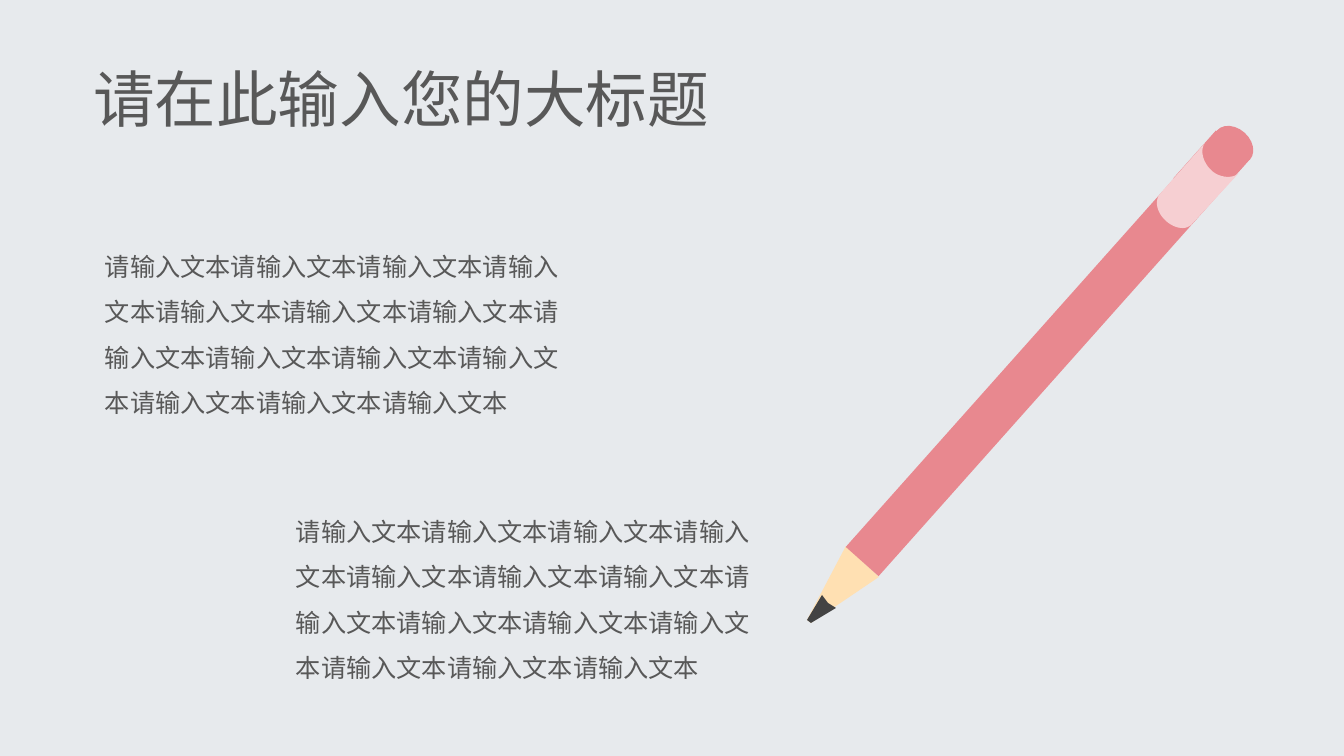
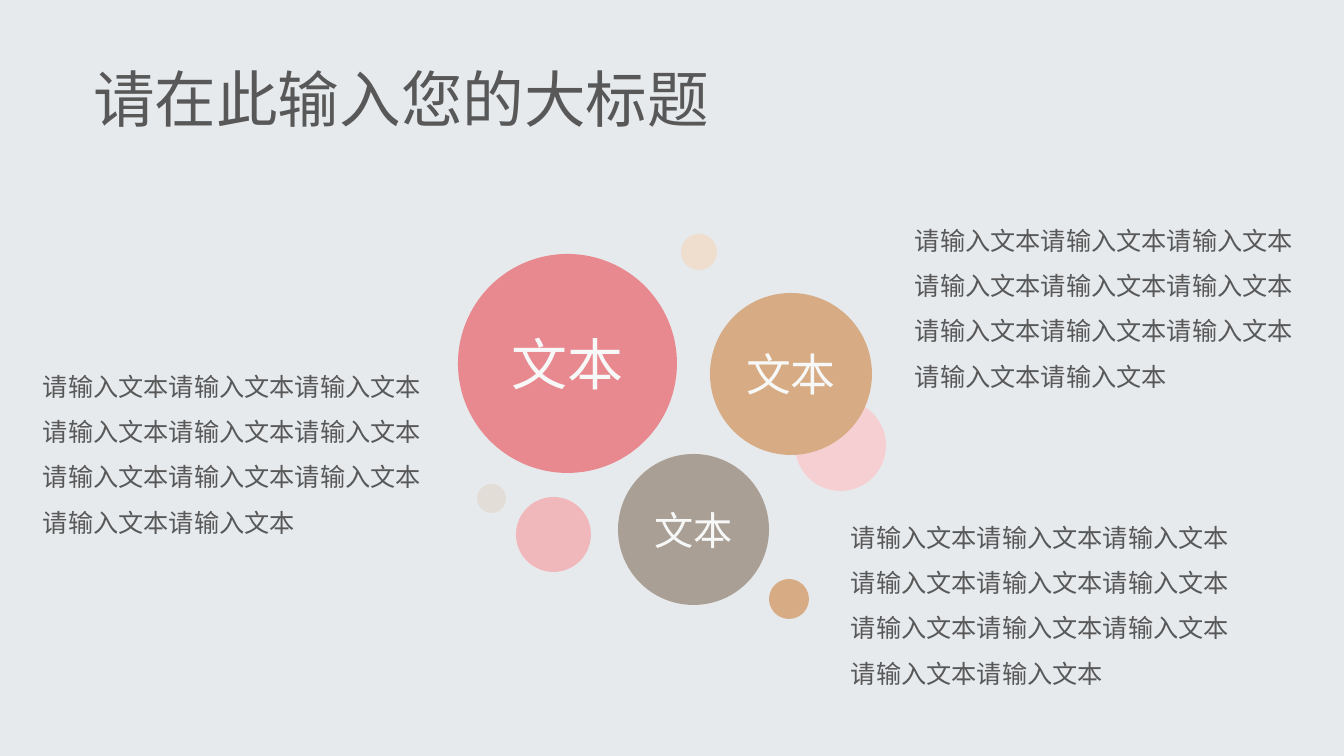
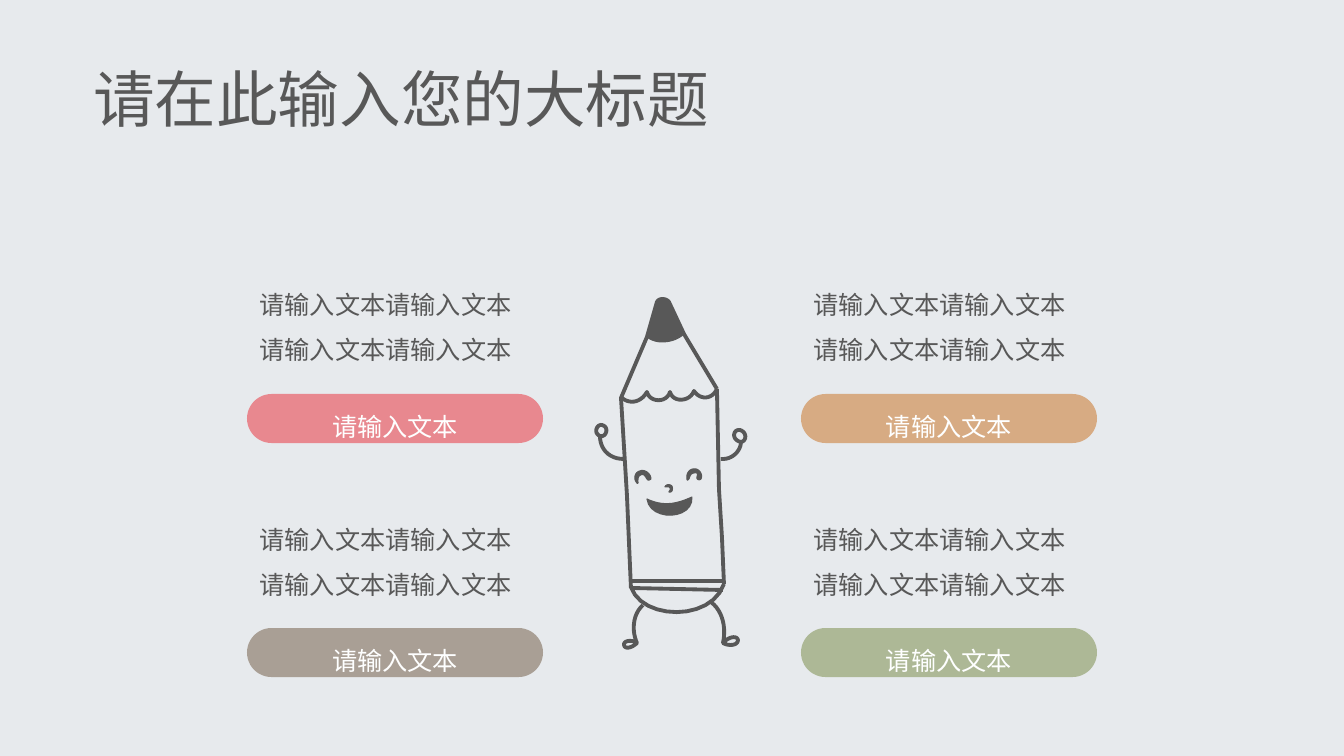
from dataclasses import dataclass
from typing import Optional, Union

from lxml import etree
from pptx import Presentation
from pptx.dml.color import RGBColor
from pptx.enum.shapes import MSO_SHAPE
from pptx.enum.text import MSO_ANCHOR, MSO_AUTO_SIZE, PP_ALIGN
from pptx.oxml.ns import qn
from pptx.shapes.autoshape import Shape
from pptx.shapes.shapetree import GroupShapes, SlideShapes
from pptx.slide import Slide, SlideLayout
from pptx.text.text import TextFrame
from pptx.util import Emu, Pt

EMU_PER_PX = 914400 / 100.8
SLIDE_WIDTH, SLIDE_HEIGHT = 1344, 756
TITLE_ONLY = 5
FIRST_SHAPE_INDEX = 2
CURVE_STEPS = 12
PENCIL_ANGLE = 131.7

RECTANGLE = MSO_SHAPE.RECTANGLE
OVAL = MSO_SHAPE.OVAL
ROUNDED = MSO_SHAPE.ROUNDED_RECTANGLE
LEFT, CENTER = PP_ALIGN.LEFT, PP_ALIGN.CENTER
MIDDLE, BOTTOM = MSO_ANCHOR.MIDDLE, MSO_ANCHOR.BOTTOM
NO_AUTOFIT = MSO_AUTO_SIZE.NONE

TITLE = "请在此输入您的大标题"
PHRASE = "请输入文本"
WORD = "文本"

Shapes = Union[SlideShapes, GroupShapes]
Segment = tuple[int, ...]  # two numbers: line to a point; six: cubic curve


@dataclass(frozen=True)
class Theme:
    font: str = "Noto Sans CJK SC"
    background: str = "E7EAED"
    text: str = "585858"
    circle_text: str = "F7F8F8"
    pill_text: str = "FEFFFF"
    rose: str = "E8888F"
    blush: str = "F1B8BC"
    pale_rose: str = "F6CFD2"
    tan: str = "D7AB83"
    pale_tan: str = "EFDDCD"
    taupe: str = "A99F95"
    sage: str = "ADB896"
    wood: str = "FFE0B2"
    lead: str = "434343"
    title_size: int = 44
    body_size: int = 18
    title_spacing: float = 0.9
    body_spacing: float = 1.5
    stroke: float = 2.75
    outline: float = 0.75


THEME = Theme()


@dataclass(frozen=True)
class Box:
    left: int
    top: int
    width: int
    height: int


@dataclass(frozen=True)
class Circle:
    left: int
    top: int
    diameter: int
    color: str
    text_size: int = 0
    alpha: int = 100


@dataclass(frozen=True)
class Outline:
    start: tuple[int, int]
    segments: tuple[Segment, ...]
    fill: Optional[str] = None
    line_width: float = 0


def stroke(start: tuple[int, int], *segments: Segment) -> Outline:
    return Outline(start, segments, line_width=THEME.stroke)


def blot(start: tuple[int, int], *segments: Segment) -> Outline:
    """Closed doodle part, filled with the drawing colour."""
    return Outline(start, segments, THEME.text, THEME.outline)


PENCIL_WOOD = Outline((879, 577), ((811, 623), (807, 620), (846, 546)), THEME.wood)
PENCIL_BAND = Outline(
    (1166, 221),
    (
        (1157, 213, 1154, 201, 1160, 194),
        (1205, 143),
        (1200, 149, 1202, 162, 1212, 171),
        (1220, 178, 1233, 179, 1239, 173),
        (1193, 223),
        (1187, 231, 1175, 229, 1166, 221),
    ),
    THEME.pale_rose,
)
PENCIL_LEAD = Outline(
    (828, 603), ((836, 608), (811, 623), (807, 620), (822, 595)), THEME.lead
)

DOODLE_STROKES = (
    # cone and its scalloped edge
    stroke((621, 398), (647, 337), (657, 302), (659, 298, 666, 298, 669, 302),
           (684, 334), (717, 389)),
    stroke((621, 397), (628, 404, 640, 404, 647, 392), (650, 403, 667, 403, 670, 392),
           (673, 403, 690, 402, 694, 391), (700, 400, 712, 400, 717, 389)),
    # barrel and base
    stroke((621, 397), (627, 495), (631, 588)),
    stroke((717, 389), (719, 489), (722, 537), (724, 584)),
    stroke((631, 581), (723, 581)),
    stroke((631, 588), (723, 590)),
    stroke((631, 587), (642, 620, 711, 622, 724, 584)),
    # arms and hands
    stroke((624, 459), (608, 459, 600, 448, 600, 436), (593, 433, 597, 424, 602, 425),
           (610, 427, 606, 438, 600, 436)),
    stroke((721, 459), (733, 460, 741, 450, 741, 442), (731, 440, 733, 429, 740, 430),
           (747, 432, 747, 441, 741, 442)),
    # legs and feet
    stroke((643, 605), (632, 615, 632, 632, 637, 643), (632, 648, 624, 650, 624, 644),
           (625, 640, 633, 640, 637, 643)),
    stroke((711, 602), (724, 612, 726, 630, 723, 643), (728, 637, 737, 635, 738, 640),
           (738, 646, 728, 646, 723, 643)),
)
DOODLE_BLOTS = (
    # tip
    blot((647, 337), (657, 302), (659, 298, 666, 298, 669, 302), (684, 334),
         (675, 343, 656, 345, 647, 337)),
    # eyes
    blot((640, 471), (635, 472, 633, 479, 637, 483), (637, 484, 639, 483, 638, 482),
         (638, 479, 638, 476, 641, 475), (643, 474, 644, 475, 645, 476),
         (646, 477, 646, 478, 647, 479), (648, 481, 650, 480, 651, 479),
         (651, 473, 644, 469, 640, 471)),
    blot((696, 469), (689, 468, 686, 474, 687, 479), (687, 481, 688, 480, 689, 479),
         (690, 477, 690, 473, 695, 473), (697, 472, 698, 474, 697, 477),
         (696, 479, 699, 481, 701, 479), (703, 475, 700, 470, 696, 469)),
    # nose and mouth
    blot((672, 486), (670, 484, 666, 484, 665, 487), (667, 487, 669, 486, 670, 488),
         (671, 489, 670, 490, 669, 492), (673, 493, 673, 488, 672, 486)),
    blot((647, 499), (662, 506, 675, 505, 692, 497), (694, 520, 650, 522, 647, 499)),
)

CIRCLES = (
    Circle(795, 400, 91, THEME.pale_rose),
    Circle(681, 234, 36, THEME.pale_tan),
    Circle(477, 484, 29, THEME.tan, alpha=20),
    Circle(769, 579, 40, THEME.tan),
    Circle(458, 254, 219, THEME.rose, text_size=40),
    Circle(516, 497, 75, THEME.blush),
    Circle(710, 293, 162, THEME.tan, text_size=32),
    Circle(618, 454, 151, THEME.taupe, text_size=28),
)


def px(length: float) -> Emu:
    return Emu(round(length * EMU_PER_PX))


def edges(box: Box) -> tuple[Emu, Emu, Emu, Emu]:
    return px(box.left), px(box.top), px(box.width), px(box.height)


def paint(shape: Shape, fill: Optional[str], line_width: float = 0, alpha: int = 100) -> None:
    shape.shadow.inherit = False
    if fill is None:
        shape.fill.background()
    else:
        shape.fill.solid()
        shape.fill.fore_color.rgb = RGBColor.from_string(fill)
        if alpha < 100:
            color = shape.fill._xPr.find(f"{qn('a:solidFill')}/{qn('a:srgbClr')}")
            etree.SubElement(color, qn("a:alpha"), val=str(alpha * 1000))
    if line_width:
        shape.line.color.rgb = RGBColor.from_string(THEME.text)
        shape.line.width = Pt(line_width)
    else:
        shape.line.fill.background()


def write(
    frame: TextFrame,
    text: str,
    size: int,
    color: str,
    alignment: PP_ALIGN = LEFT,
    spacing: float = 1.0,
) -> None:
    frame.word_wrap = True
    frame.auto_size = NO_AUTOFIT
    paragraph = frame.paragraphs[0]
    paragraph.alignment = alignment
    paragraph.line_spacing = spacing
    run = paragraph.add_run()
    run.text = text
    run.font.size = Pt(size)
    run.font.color.rgb = RGBColor.from_string(color)
    run.font.name = THEME.font
    etree.SubElement(run._r.get_or_add_rPr(), qn("a:ea"), typeface=THEME.font)


def write_body(shape: Shape, text: str, color: str, alignment: PP_ALIGN) -> None:
    shape.text_frame.vertical_anchor = MIDDLE
    write(shape.text_frame, text, THEME.body_size, color, alignment, THEME.body_spacing)


def add_preset(
    shapes: Shapes,
    kind: MSO_SHAPE,
    box: Box,
    fill: Optional[str],
    alpha: int = 100,
    rotation: float = 0,
) -> Shape:
    shape = shapes.add_shape(kind, *edges(box))
    shape.rotation = rotation
    paint(shape, fill, alpha=alpha)
    return shape


def add_rounded(slide: Slide, box: Box, fill: Optional[str], rounding: float) -> Shape:
    shape = add_preset(slide.shapes, ROUNDED, box, fill)
    shape.adjustments[0] = rounding
    return shape


def flatten(outline: Outline) -> list[tuple[float, float]]:
    """Points along the outline after its start, with curves sampled evenly."""
    points = []
    x0, y0 = outline.start
    for segment in outline.segments:
        if len(segment) == 6:
            x1, y1, x2, y2, x3, y3 = segment
            for step in range(1, CURVE_STEPS):
                t = step / CURVE_STEPS
                a, b, c, d = (1 - t) ** 3, 3 * t * (1 - t) ** 2, 3 * t * t * (1 - t), t**3
                points.append((a * x0 + b * x1 + c * x2 + d * x3,
                               a * y0 + b * y1 + c * y2 + d * y3))
        x0, y0 = segment[-2:]
        points.append((x0, y0))
    return points


def add_outlines(shapes: Shapes, first: Outline, *others: Outline) -> None:
    """Draw all outlines as one shape, painted like the first."""
    builder = shapes.build_freeform(*map(px, first.start))
    for outline in (first, *others):
        if outline is not first:
            builder.move_to(*map(px, outline.start))
        builder.add_line_segments(
            [(px(x), px(y)) for x, y in flatten(outline)], close=outline.fill is not None
        )
    paint(builder.convert_to_shape(), first.fill, first.line_width)


def add_body_text(slide: Slide, box: Box, repeats: int, alignment: PP_ALIGN = LEFT) -> None:
    shape = slide.shapes.add_textbox(*edges(box))
    write_body(shape, PHRASE * repeats, THEME.text, alignment)


def add_circle(shapes: Shapes, circle: Circle) -> None:
    box = Box(circle.left, circle.top, circle.diameter, circle.diameter)
    shape = add_preset(shapes, OVAL, box, circle.color, alpha=circle.alpha)
    if circle.text_size:
        shape.text_frame.vertical_anchor = MIDDLE
        write(shape.text_frame, WORD, circle.text_size, THEME.circle_text, CENTER)


def style_layout(presentation: Presentation) -> SlideLayout:
    layout = presentation.slide_layouts[TITLE_ONLY]
    title = layout.placeholders[0]
    title.left, title.top, title.width, title.height = edges(Box(83, 18, 1177, 123))
    title.text_frame.vertical_anchor = BOTTOM
    return layout


def add_master_backdrop(presentation: Presentation, slide: Slide) -> None:
    """Draw the backdrop on a slide, then move it behind everything on the master."""
    box = Box(0, 0, SLIDE_WIDTH, SLIDE_HEIGHT)
    backdrop = add_preset(slide.shapes, RECTANGLE, box, THEME.background)
    master_tree = presentation.slide_master.shapes._spTree
    master_tree.insert(FIRST_SHAPE_INDEX, backdrop._element)


def add_titled_slide(presentation: Presentation, layout: SlideLayout) -> Slide:
    slide = presentation.slides.add_slide(layout)
    write(slide.shapes.title.text_frame, TITLE, THEME.title_size, THEME.text,
          spacing=THEME.title_spacing)
    return slide


def build_pencil_slide(slide: Slide) -> None:
    pencil = slide.shapes.add_group_shape().shapes
    add_outlines(pencil, PENCIL_WOOD)
    for kind, box in (
        (RECTANGLE, Box(769, 332, 556, 44)),
        (OVAL, Box(1217, 123, 33, 44)),
        (RECTANGLE, Box(1179, 147, 64, 44)),
    ):
        add_preset(pencil, kind, box, THEME.rose, rotation=PENCIL_ANGLE)
    add_outlines(pencil, PENCIL_BAND)
    add_outlines(pencil, PENCIL_LEAD)
    for left, top in ((95, 207), (286, 472)):
        add_body_text(slide, Box(left, top, 483, 240), repeats=14)


def build_circles_slide(slide: Slide) -> None:
    cluster = slide.shapes.add_group_shape().shapes
    for circle in CIRCLES:
        add_circle(cluster, circle)
    for left, top in ((905, 200), (841, 497), (33, 346)):
        shape = add_rounded(slide, Box(left, top, 415, 201), None, rounding=0)
        write_body(shape, PHRASE * 11, THEME.text, LEFT)


def build_doodle_slide(slide: Slide) -> None:
    doodle = slide.shapes.add_group_shape().shapes
    add_outlines(doodle, *DOODLE_STROKES)
    for outline in DOODLE_BLOTS:
        add_outlines(doodle, outline)
    colors = (THEME.rose, THEME.tan, THEME.taupe, THEME.sage)
    for index, color in enumerate(colors):
        row, column = divmod(index, 2)
        left = 247 + 554 * column
        add_body_text(slide, Box(left, 264 + 235 * row, 277, 111), 4, CENTER)
        pill = add_rounded(slide, Box(left, 394 + 234 * row, 296, 49), color, rounding=0.5)
        write_body(pill, PHRASE, THEME.pill_text, CENTER)


def main() -> None:
    presentation = Presentation()
    presentation.slide_width = px(SLIDE_WIDTH)
    presentation.slide_height = px(SLIDE_HEIGHT)
    layout = style_layout(presentation)
    for build in (build_pencil_slide, build_circles_slide, build_doodle_slide):
        build(add_titled_slide(presentation, layout))
    add_master_backdrop(presentation, presentation.slides[0])
    presentation.save("out.pptx")


if __name__ == "__main__":
    main()
